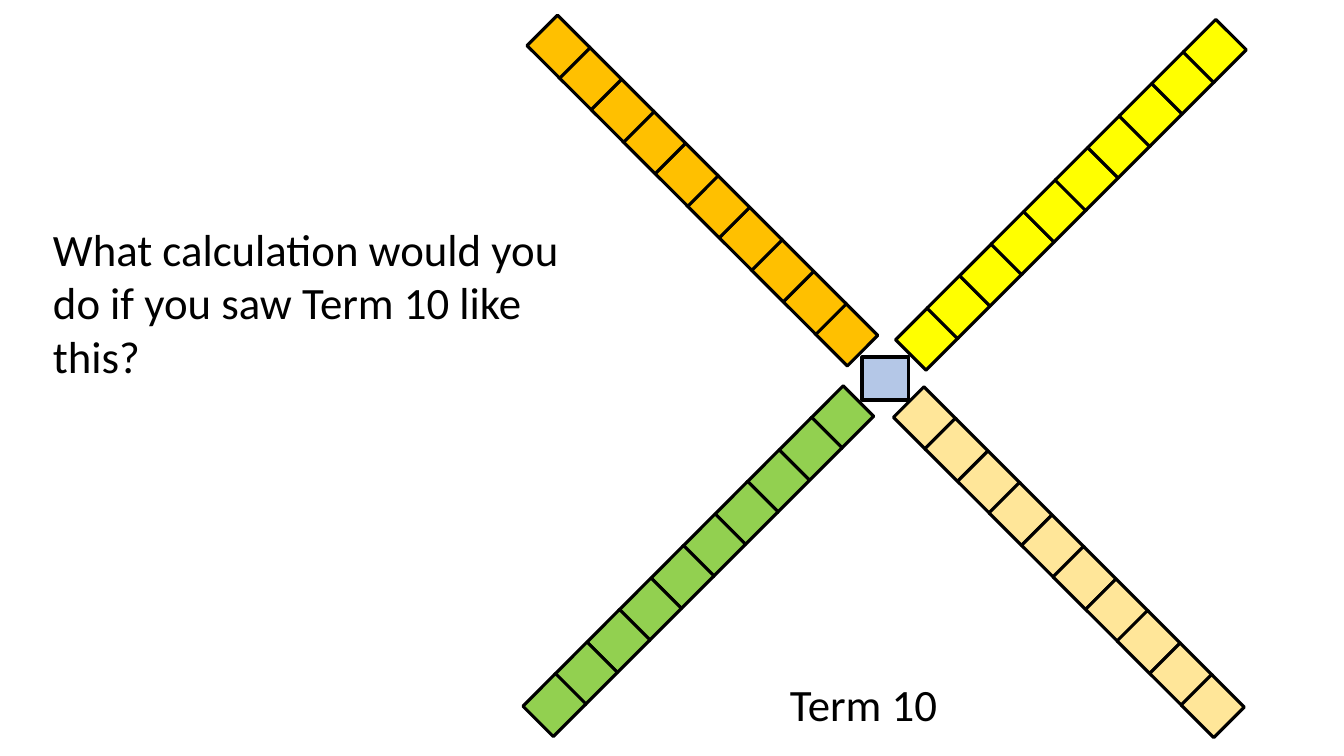
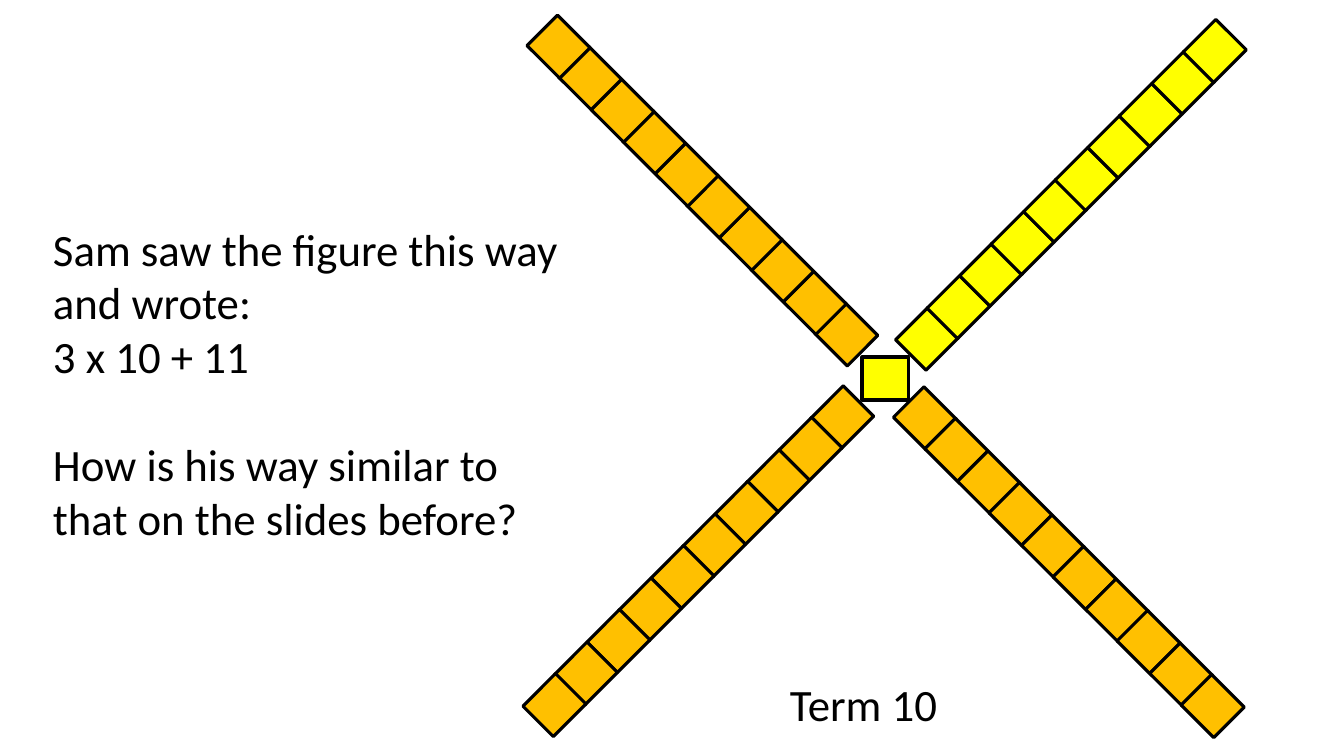
from pptx import Presentation
from pptx.dml.color import RGBColor
from pptx.enum.shapes import MSO_SHAPE
from pptx.enum.text import MSO_AUTO_SIZE, PP_ALIGN
from pptx.util import Pt

PX = 9525
RECT = MSO_SHAPE.RECTANGLE
GROW = MSO_AUTO_SIZE.SHAPE_TO_FIT_TEXT
LEFT, CENTER = PP_ALIGN.LEFT, PP_ALIGN.CENTER

BLACK = RGBColor(0x00, 0x00, 0x00)
BLUE = RGBColor(0xB4, 0xC7, 0xE7)
CREAM = RGBColor(0xFF, 0xE6, 0x99)
GREEN = RGBColor(0x92, 0xD0, 0x50)
YELLOW = RGBColor(0xFF, 0xFF, 0x00)
ORANGE = RGBColor(0xFF, 0xC0, 0x00)

TERM = 10
TILE_W, TILE_H = 44, 41
ARM_SPAN = 274
ARMS = [
    (859, 378, 1, 1, 45),
    (780, 377, -1, 1, 135),
    (861, 302, 1, -1, 315),
    (784, 298, -1, -1, 45),
]


class Deck:
    """Slides of tile patterns with a shared text and outline style."""

    def __init__(self):
        self.prs = Presentation()
        self.prs.slide_width, self.prs.slide_height = 1280 * PX, 720 * PX
        self.s = None

    def slide(self):
        self.s = self.prs.slides.add_slide(self.prs.slide_layouts[6])

    def text(self, x, y, w, h, lines, align=LEFT):
        sp = self.s.shapes.add_textbox(x * PX, y * PX, w * PX, h * PX)
        tf = sp.text_frame
        tf.word_wrap = True
        tf.auto_size = GROW
        tf.text = "\n".join(lines)
        for p in tf.paragraphs:
            p.alignment = align
            for r in p.runs:
                r.font.name, r.font.size = "Calibri", Pt(32)
                r.font.color.rgb = BLACK
        return tf

    def tile(self, shapes, x, y, fill, rotation=0):
        sp = shapes.add_shape(RECT, x * PX, y * PX, TILE_W * PX, TILE_H * PX)
        sp.rotation = rotation
        sp.shadow.inherit = False
        sp.fill.solid()
        sp.fill.fore_color.rgb = fill
        sp.line.color.rgb = BLACK
        sp.line.width = Pt(2.25)

    def arm(self, x, y, dx, dy, rotation, fill):
        group = self.s.shapes.add_group_shape()
        for i in range(TERM):
            step = round(i * ARM_SPAN / (TERM - 1))
            self.tile(group.shapes, x + dx * step, y + dy * step, fill, rotation)

    def pattern(self, center_fill, arm_fills):
        self.text(735, 640, 175, 61, [f"Term {TERM}"], CENTER)
        self.tile(self.s.shapes, 821, 340, center_fill)
        for arm, fill in zip(ARMS, arm_fills):
            self.arm(*arm, fill)


def main():
    deck = Deck()

    deck.slide()
    deck.text(41, 206, 509, 165, [
        "What calculation would you do if you saw Term 10 like this?",
    ])
    deck.pattern(BLUE, [CREAM, GREEN, YELLOW, ORANGE])

    deck.slide()
    tf = deck.text(41, 206, 509, 320, [
        "Sam saw the figure this way and wrote:",
        "3 x 10 + 11",
        "How is his way similar to that on the slides before?",
    ])
    tf.paragraphs[-1].space_before = Pt(39)
    deck.pattern(YELLOW, [ORANGE, ORANGE, YELLOW, ORANGE])

    deck.prs.save("out.pptx")


if __name__ == "__main__":
    main()
